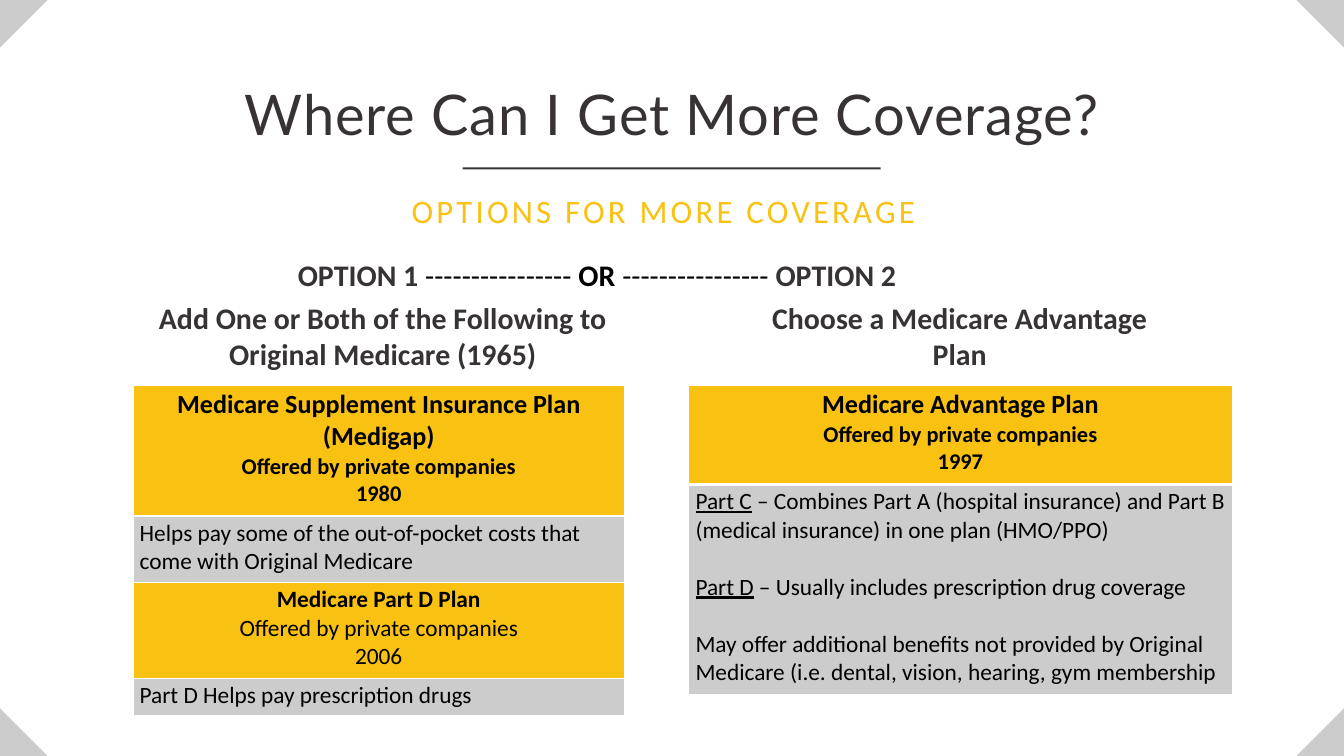
from dataclasses import dataclass

from lxml import etree
from pptx import Presentation
from pptx import util as u
from pptx.dml.color import RGBColor
from pptx.enum import shapes, text
from pptx.oxml.ns import qn

EMU_PER_PX = 9525
SLIDE_W, SLIDE_H = 1920, 1080
CORNER = 68


@dataclass(frozen=True)
class Theme:
    dark: str = "373334"
    gold: str = "F9C213"
    grey: str = "CCCCCC"
    black: str = "000000"
    white: str = "FFFFFF"
    title_font: str = "Lato"
    body_font: str = "Calibri"
    title: int = 60
    title_line: float = 72.8
    subtitle: int = 35
    heading: int = 32
    plan: int = 28
    body: int = 25
    detail: int = 24
    paragraph_gap: float = 30.5
    thin: int = 1
    thick: int = 3


THEME = Theme()


@dataclass(frozen=True)
class Span:
    words: str
    size: int
    color: str = THEME.black
    bold: bool = False
    underline: bool = False
    font: str = THEME.body_font
    spacing: float = 0


@dataclass(frozen=True)
class Para:
    spans: tuple[Span, ...]
    centred: bool = True
    before: float = 0
    line: float = 0
    indent: int = 0


@dataclass(frozen=True)
class Box:
    left: int
    top: int
    width: int
    height: int


@dataclass(frozen=True)
class Row:
    height: int
    fill: str
    paras: tuple[Para, ...]
    bottom: int = THEME.thin


def px(length: int) -> u.Emu:
    return u.Emu(length * EMU_PER_PX)


def place(box: Box) -> tuple[u.Emu, ...]:
    return px(box.left), px(box.top), px(box.width), px(box.height)


def rgb(color: str) -> RGBColor:
    return RGBColor.from_string(color)


def write(frame, paras: tuple[Para, ...]) -> None:
    frame.word_wrap = True
    for index, para in enumerate(paras):
        target = frame.add_paragraph() if index else frame.paragraphs[0]
        target.alignment = text.PP_ALIGN.CENTER if para.centred else text.PP_ALIGN.LEFT
        if para.before:
            target.space_before = u.Pt(para.before)
        if para.line:
            target.line_spacing = u.Pt(para.line)
        if para.indent:
            target._p.get_or_add_pPr().set("marL", str(px(para.indent)))
        for span in para.spans:
            run = target.add_run()
            run.text = span.words
            font = run.font
            font.name, font.size = span.font, u.Pt(span.size)
            font.bold, font.underline = span.bold, span.underline
            font.color.rgb = rgb(span.color)
            if span.spacing:
                run._r.get_or_add_rPr().set("spc", str(round(span.spacing * 100)))


def add_text(page, box: Box, para: Para, inset: bool = True,
             anchor=text.MSO_ANCHOR.TOP) -> None:
    frame = page.shapes.add_textbox(*place(box)).text_frame
    frame.vertical_anchor = anchor
    if not inset:
        frame.margin_left = frame.margin_right = 0
        frame.margin_top = frame.margin_bottom = 0
    write(frame, (para,))


def add_solid(page, kind, box: Box, color: str, rotation: int = 0) -> None:
    shape = page.shapes.add_shape(kind, *place(box))
    shape.shadow.inherit = False
    shape.fill.solid()
    shape.fill.fore_color.rgb = rgb(color)
    shape.line.fill.background()
    shape.rotation = rotation


def add_borders(cell, top: int, bottom: int) -> None:
    """Draw white cell edges, with widths in points."""
    properties = cell._tc.get_or_add_tcPr()
    widths = {"lnL": THEME.thin, "lnR": THEME.thin, "lnT": top, "lnB": bottom}
    for index, (edge, width) in enumerate(widths.items()):
        line = etree.Element(qn(f"a:{edge}"), w=str(u.Pt(width)))
        fill = etree.SubElement(line, qn("a:solidFill"))
        etree.SubElement(fill, qn("a:srgbClr"), val=THEME.white)
        properties.insert(index, line)


def add_plan_table(page, left: int, top: int, width: int, rows: tuple[Row, ...]) -> None:
    box = Box(left, top, width, sum(row.height for row in rows))
    table = page.shapes.add_table(len(rows), 1, *place(box)).table
    table.first_row = table.horz_banding = False
    edge = THEME.thin
    for index, row in enumerate(rows):
        table.rows[index].height = px(row.height)
        cell = table.cell(index, 0)
        cell.fill.solid()
        cell.fill.fore_color.rgb = rgb(row.fill)
        add_borders(cell, edge, row.bottom)
        write(cell.text_frame, row.paras)
        edge = row.bottom


def plan_header(height: int, name: str, year: str) -> Row:
    sizes = ((name, THEME.plan), ("Offered by private companies", THEME.detail),
             (year, THEME.detail))
    paras = tuple(Para((Span(words, size, bold=True),)) for words, size in sizes)
    return Row(height, THEME.gold, paras, THEME.thick)


def body(words: str, underline: bool = False, bold: bool = False) -> Span:
    return Span(words, THEME.body, bold=bold, underline=underline)


def details(height: int, *lines: tuple[Span, ...]) -> Row:
    paras = tuple(Para(line, centred=False, before=THEME.paragraph_gap if index else 0)
                  for index, line in enumerate(lines))
    return Row(height, THEME.grey, paras)


def heading(words: str, color: str = THEME.dark, bold: bool = True) -> Span:
    return Span(words, THEME.heading, color, bold)


SUPPLEMENT_ROWS = (
    plan_header(186, "Medicare Supplement Insurance Plan (Medigap)", "1980"),
    details(95, (body("Helps pay some of the out-of-pocket costs that come with "
                      "Original Medicare"),)),
    Row(137, THEME.gold, (Para((body("Medicare Part D Plan", bold=True),)),
                          Para((body("Offered by private companies"),)),
                          Para((body("2006"),)))),
    details(53, (body("Part D Helps pay prescription drugs"),)),
)
ADVANTAGE_ROWS = (
    plan_header(141, "Medicare Advantage Plan", "1997"),
    details(300,
            (body("Part C", underline=True),
             body(" – Combines Part A (hospital insurance) and Part B "
                  "(medical insurance) in one plan (HMO/PPO)")),
            (body("Part D", underline=True),
             body(" – Usually includes prescription drug coverage")),
            (body("May offer additional benefits not provided by Original Medicare "
                  "(i.e. dental, vision, hearing, gym membership"),)),
)
OPTIONS = (heading("OPTION 1 "),
           heading("---------------- ", THEME.black, False),
           heading("OR", THEME.black),
           heading(" ---------------- ", THEME.black, False),
           heading("OPTION 2"))


def main() -> None:
    deck = Presentation()
    deck.slide_width, deck.slide_height = px(SLIDE_W), px(SLIDE_H)
    page = deck.slides.add_slide(deck.slide_layouts[6])

    add_solid(page, shapes.MSO_SHAPE.RECTANGLE, Box(661, 239, 597, 3), THEME.dark)
    title = Span("Where Can I Get More Coverage?", THEME.title, THEME.dark,
                 font=THEME.title_font, spacing=1)
    add_text(page, Box(288, 112, 1344, 91), Para((title,), line=THEME.title_line), inset=False)

    right, bottom = SLIDE_W - CORNER, SLIDE_H - CORNER
    corners = ((0, bottom), (0, 0), (right, 0), (right, bottom))
    for turn, (left, top) in enumerate(corners):
        add_solid(page, shapes.MSO_SHAPE.RIGHT_TRIANGLE,
                  Box(left, top, CORNER, CORNER), THEME.grey, 90 * turn)

    subtitle = Span("OPTIONS FOR MORE COVERAGE", THEME.subtitle, THEME.gold, spacing=3.5)
    add_text(page, Box(456, 268, 984, 68), Para((subtitle,)))
    add_text(page, Box(320, 322, 1200, 100), Para(OPTIONS, centred=False, indent=96),
             anchor=text.MSO_ANCHOR.BOTTOM)
    for left, width, words in (
            (211, 672, "Add One or Both of the Following to Original Medicare (1965)"),
            (1088, 566, "Choose a Medicare Advantage Plan")):
        add_text(page, Box(left, 423, width, 113), Para((heading(words),)))

    add_plan_table(page, 190, 551, 702, SUPPLEMENT_ROWS)
    add_plan_table(page, 984, 551, 776, ADVANTAGE_ROWS)
    deck.save("out.pptx")


if __name__ == "__main__":
    main()
